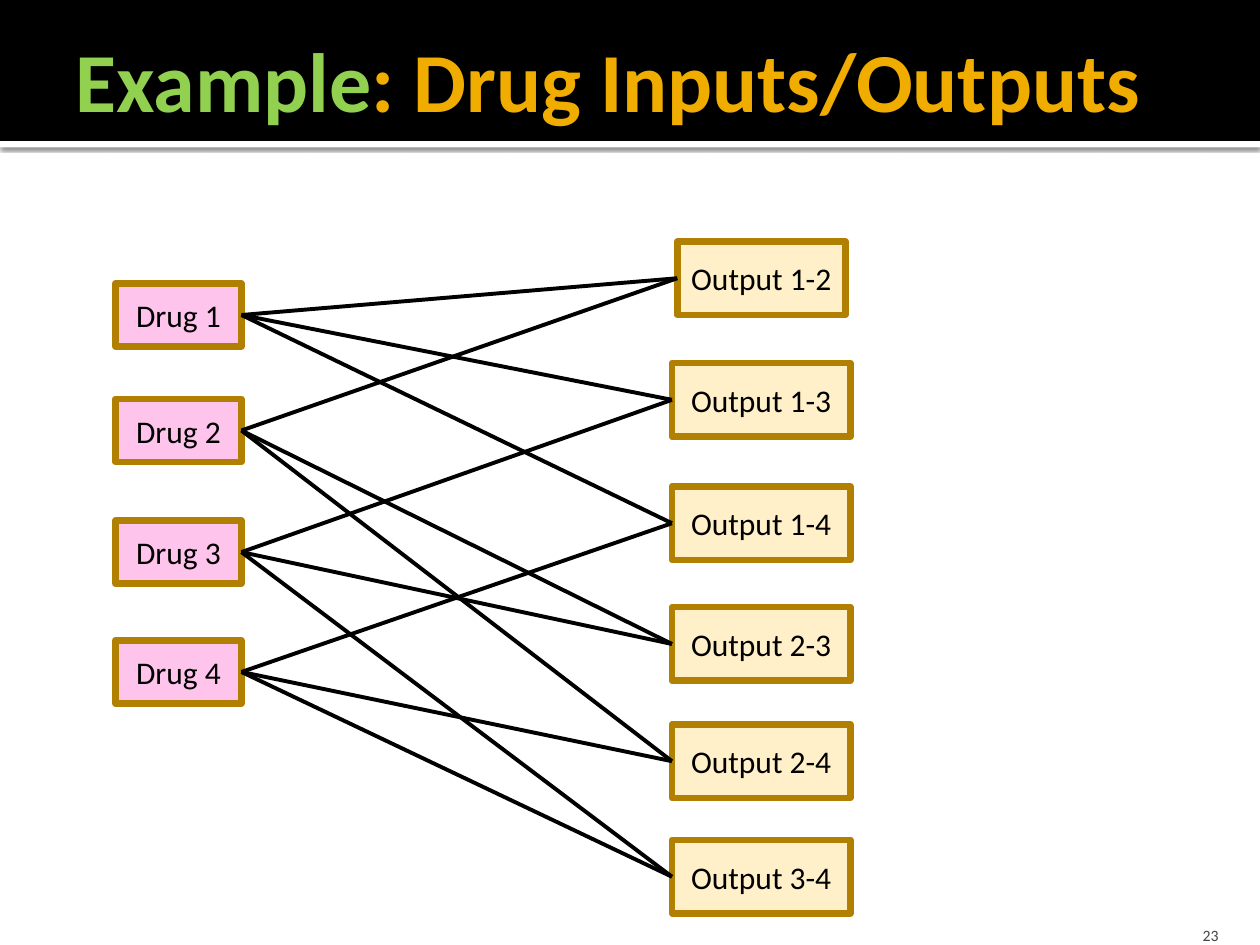
from dataclasses import dataclass
from itertools import combinations

from lxml.etree import SubElement
from pptx import Presentation
from pptx.dml.color import RGBColor
from pptx.enum.shapes import MSO_CONNECTOR, MSO_SHAPE
from pptx.enum.text import MSO_ANCHOR, MSO_AUTO_SIZE, PP_ALIGN
from pptx.oxml import parse_xml
from pptx.oxml.ns import nsdecls, qn
from pptx.shapes.autoshape import Shape
from pptx.slide import Slide
from pptx.text.text import _Run
from pptx.util import Pt


@dataclass(frozen=True)
class Theme:
    font: str = "Calibri"
    black: str = "000000"
    white: str = "FFFFFF"
    green: str = "92D050"
    amber: str = "F0AD00"
    grey: str = "454545"
    pink: str = "FFC4EC"
    cream: str = "FFF0C9"
    border: str = "B28000"
    title_size: float = 48
    box_size: float = 18
    number_size: float = 9
    border_width: float = 3.78
    link_width: float = 2.25


@dataclass(frozen=True)
class Box:
    text: str
    left: float
    top: float
    width: float
    height: float
    fill: str


THEME = Theme()
RIGHT_SITE, LEFT_SITE = 3, 1
DRUG_TOPS = (162, 228, 297.5, 366)
OUTPUT_TOPS = (138, 207.5, 278, 347, 414, 480)
PAIRS = list(combinations(range(1, len(DRUG_TOPS) + 1), 2))


def style_run(r: _Run, size: float, color: str, bold: bool = False) -> None:
    r.font.name = THEME.font
    r.font.size = Pt(size)
    r.font.bold = bold
    r.font.color.rgb = RGBColor.from_string(color)


def add_rect(s: Slide, left: float, top: float, width: float, height: float,
             fill: str) -> Shape:
    sp = s.shapes.add_shape(MSO_SHAPE.RECTANGLE, Pt(left), Pt(top), Pt(width), Pt(height))
    sp.shadow.inherit = False
    sp.fill.solid()
    sp.fill.fore_color.rgb = RGBColor.from_string(fill)
    sp.line.fill.background()
    return sp


def add_header(s: Slide) -> None:
    strip = add_rect(s, 0, 80.6, 720, 3.6, THEME.white)
    effects = strip._element.spPr.find(qn("a:effectLst"))
    effects.append(parse_xml(
        f'<a:outerShdw {nsdecls("a")} blurRad="{Pt(2.5)}" dist="{Pt(0.8)}" dir="5400000">'
        f'<a:srgbClr val="{THEME.black}"><a:alpha val="60000"/></a:srgbClr></a:outerShdw>'))
    add_rect(s, 0, 0, 720, 80.6, THEME.black)


def add_title(s: Slide) -> None:
    title = s.shapes.title
    s.shapes._spTree.append(title._element)  # in front of the header band
    title.left, title.top, title.width, title.height = Pt(36), Pt(12.2), Pt(684), Pt(66.2)
    tf = title.text_frame
    tf.auto_size = MSO_AUTO_SIZE.NONE
    tf.vertical_anchor = MSO_ANCHOR.MIDDLE
    tf.margin_left = Pt(7.2)
    tf.margin_right = tf.margin_top = tf.margin_bottom = Pt(3.6)
    p = tf.paragraphs[0]
    p.alignment = PP_ALIGN.LEFT
    for text, color in (("Example", THEME.green), (": Drug Inputs/Outputs", THEME.amber)):
        r = p.add_run()
        r.text = text
        style_run(r, THEME.title_size, color, bold=True)


def add_slide_number(s: Slide, number: str) -> None:
    tf = s.shapes.add_textbox(Pt(645.8), Pt(518.4), Pt(57.6), Pt(21.6)).text_frame
    tf.word_wrap = True
    tf.vertical_anchor = MSO_ANCHOR.BOTTOM
    tf.margin_bottom = 0
    tf.text = number
    p = tf.paragraphs[0]
    p.alignment = PP_ALIGN.RIGHT
    style_run(p.runs[0], THEME.number_size, THEME.grey)


def add_box(s: Slide, box: Box) -> Shape:
    sp = add_rect(s, box.left, box.top, box.width, box.height, box.fill)
    sp.line.color.rgb = RGBColor.from_string(THEME.border)
    sp.line.width = Pt(THEME.border_width)
    SubElement(sp.line._ln, qn("a:round"))
    tf = sp.text_frame
    tf.word_wrap = False
    tf.vertical_anchor = MSO_ANCHOR.MIDDLE
    tf.text = box.text
    p = tf.paragraphs[0]
    p.alignment = PP_ALIGN.CENTER
    style_run(p.runs[0], THEME.box_size, THEME.black)
    return sp


def add_link(s: Slide, drug: Shape, output: Shape) -> None:
    line = s.shapes.add_connector(MSO_CONNECTOR.STRAIGHT, 0, 0, 0, 0)
    line.begin_connect(drug, RIGHT_SITE)
    line.end_connect(output, LEFT_SITE)
    line.line.color.rgb = RGBColor.from_string(THEME.black)
    line.line.width = Pt(THEME.link_width)
    SubElement(line._element.spPr, qn("a:effectLst"))


def output_box(pair: tuple[int, int], top: float) -> Box:
    """The first output is slightly narrower, on the same centre line."""
    left, width = (387, 96) if pair == PAIRS[0] else (384, 102)
    return Box(f"Output {pair[0]}-{pair[1]}", left, top, width, 42, THEME.cream)


def main() -> None:
    prs = Presentation()
    prs.slide_width, prs.slide_height = Pt(720), Pt(540)
    s = prs.slides.add_slide(prs.slide_layouts[5])
    add_header(s)
    add_title(s)
    add_slide_number(s, "23")

    drugs = {n: add_box(s, Box(f"Drug {n}", 66, top, 72, 36, THEME.pink))
             for n, top in enumerate(DRUG_TOPS, 1)}
    outputs = {pair: add_box(s, output_box(pair, top))
               for pair, top in zip(PAIRS, OUTPUT_TOPS)}
    for n, drug in drugs.items():
        for pair, output in outputs.items():
            if n in pair:
                add_link(s, drug, output)

    prs.save("out.pptx")


if __name__ == "__main__":
    main()
